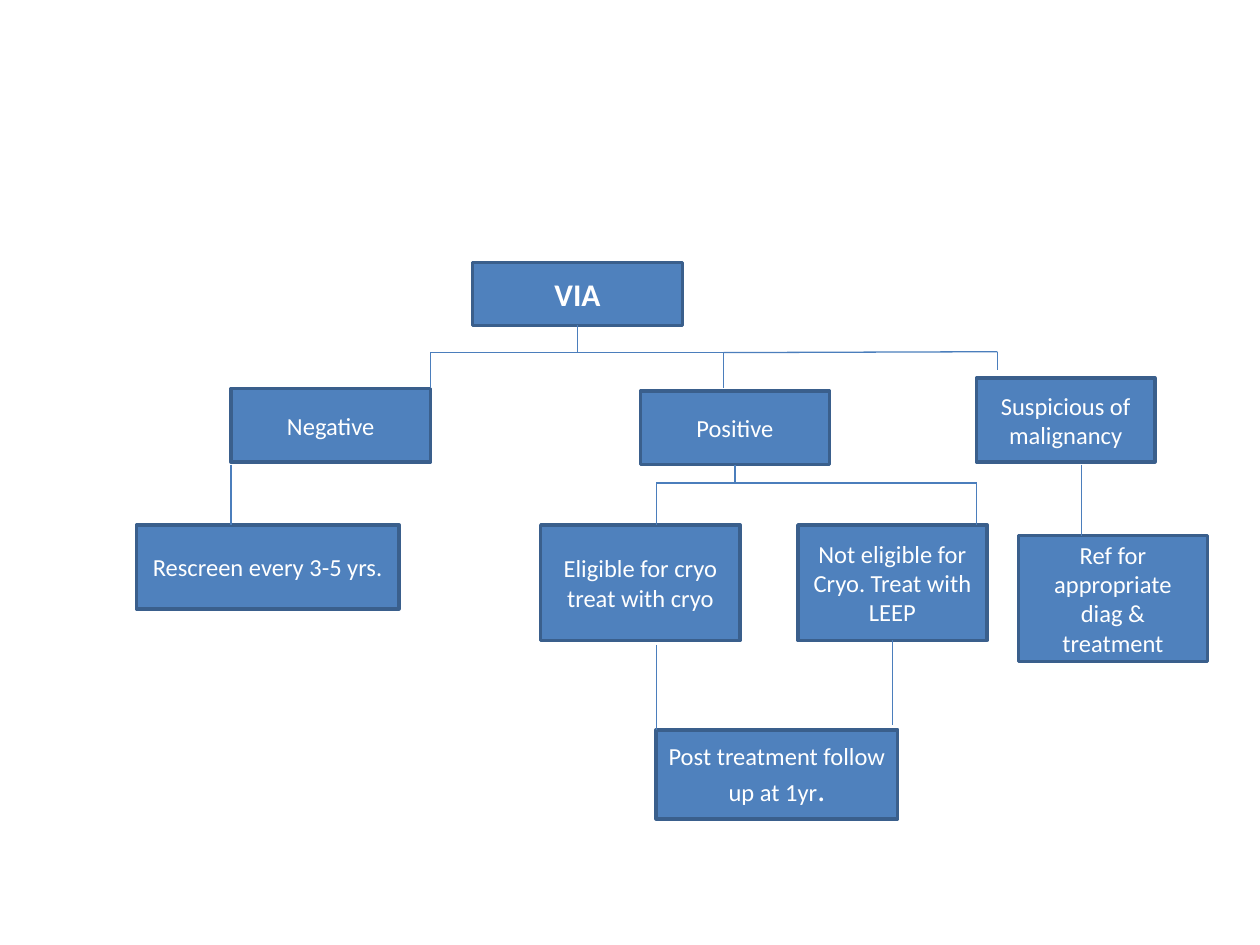
from dataclasses import dataclass

from lxml.etree import SubElement
from pptx import Presentation
from pptx.dml.color import RGBColor as Color
from pptx.enum.shapes import MSO_CONNECTOR as Connector, MSO_SHAPE as Shape
from pptx.enum.text import MSO_ANCHOR as Anchor, PP_ALIGN as Align
from pptx.oxml.ns import qn
from pptx.util import Pt

BOTTOM = 2


@dataclass(frozen=True)
class Theme:
    font: str = "Calibri"
    fill: Color = Color(0x4F, 0x81, 0xBD)
    border: Color = Color(0x3A, 0x5F, 0x8C)
    link: Color = Color(0x4B, 0x7E, 0xBC)
    text: Color = Color(0xFF, 0xFF, 0xFF)
    body_size: float = 14
    large_size: float = 18
    border_width: float = 2
    link_width: float = 0.75


class FlowChart:
    def __init__(self, page, theme):
        self.page = page
        self.theme = theme

    def span(self, para, text, size=None, bold=False):
        span = para.add_run()
        span.text = text
        span.font.name = self.theme.font
        span.font.size = Pt(size or self.theme.body_size)
        span.font.bold = bold
        span.font.color.rgb = self.theme.text

    def box(self, left, top, width, height, *lines, size=None, bold=False):
        """Draw a filled step with one centred paragraph per line."""
        box = self.page.shapes.add_shape(
            Shape.RECTANGLE, Pt(left), Pt(top), Pt(width), Pt(height))
        box.shadow.inherit = False
        box.fill.solid()
        box.fill.fore_color.rgb = self.theme.fill
        box.line.color.rgb = self.theme.border
        box.line.width = Pt(self.theme.border_width)
        frame = box.text_frame
        frame.word_wrap = True
        frame.vertical_anchor = Anchor.MIDDLE
        for index, line in enumerate(lines):
            para = frame.add_paragraph() if index else frame.paragraphs[0]
            para.alignment = Align.CENTER
            self.span(para, line, size, bold)
        return box

    def link(self, x1, y1, x2, y2, source=None):
        """Draw a line, joined to the bottom middle of source if given."""
        link = self.page.shapes.add_connector(
            Connector.STRAIGHT, Pt(x1), Pt(y1), Pt(x2), Pt(y2))
        link.line.color.rgb = self.theme.link
        link.line.width = Pt(self.theme.link_width)
        SubElement(link._element.spPr, qn("a:effectLst"))
        if source is not None:
            link.begin_connect(source, BOTTOM)

    def branch(self, source, x, top, rail, drops):
        """Split a stem at the rail into drops, given as (x, bottom)."""
        self.link(x, top, x, rail, source)
        for drop_x, bottom in drops:
            self.link(x, rail, drop_x, rail)
            self.link(drop_x, rail, drop_x, bottom)


def main():
    deck = Presentation()
    deck.slide_width, deck.slide_height = Pt(720), Pt(540)
    theme = Theme()
    chart = FlowChart(deck.slides.add_slide(deck.slide_layouts[6]), theme)

    via = chart.box(270, 150, 120, 36, "VIA", size=theme.large_size, bold=True)
    chart.box(132, 222, 114, 42, "Negative")
    positive = chart.box(366, 223.5, 108, 42, "Positive")
    chart.box(558, 216, 102, 48, "Suspicious of malignancy")

    chart.box(78, 300, 150, 48, "Rescreen every 3-5 yrs.")
    chart.box(309, 300, 114, 66, "Eligible for cryo", "treat with cryo")
    not_eligible = chart.box(
        456, 300, 108, 66, "Not eligible for", "Cryo. Treat with LEEP")
    chart.box(582, 306, 108, 72, "Ref for appropriate diag & treatment")
    follow_up = chart.box(
        375, 417, 138, 51, "Post treatment follow up at 1yr")
    chart.span(follow_up.text_frame.paragraphs[0], ".", theme.large_size)

    chart.branch(via, 330, 186, 201.5, [(246, 222), (413.5, 222)])
    chart.link(413.5, 201.5, 570, 201)
    chart.link(570, 201, 570, 211.5)
    chart.branch(positive, 420, 265.5, 276, [(375, 300), (558, 300)])

    chart.link(132, 265.5, 132, 300)
    chart.link(618, 265.5, 618, 306)
    chart.link(375, 368.5, 375, 417)
    chart.link(510, 366, 510, 414, not_eligible)

    deck.save("out.pptx")


if __name__ == "__main__":
    main()
